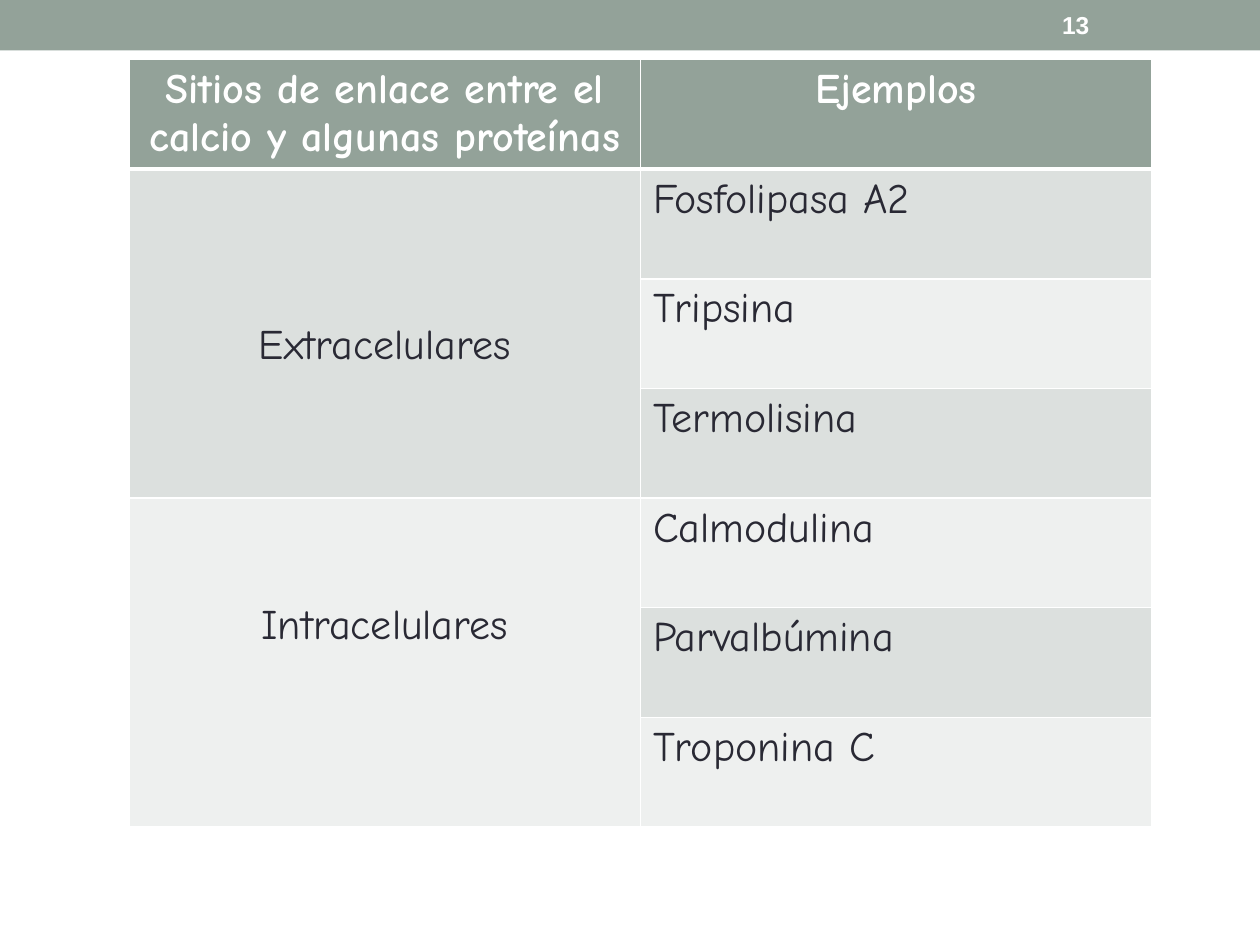
from dataclasses import dataclass

from lxml.etree import SubElement
from pptx import Presentation
from pptx.dml.color import RGBColor
from pptx.enum.shapes import MSO_SHAPE
from pptx.enum.text import MSO_ANCHOR, PP_ALIGN
from pptx.oxml.ns import qn
from pptx.util import Cm, Pt


@dataclass(frozen=True)
class Theme:
    sage: str = "93A299"
    band_dark: str = "DCE0DE"
    band_light: str = "EEF0EF"
    white: str = "FFFFFF"
    ink: str = "292934"
    table_font: str = "Comic Neue"
    number_font: str = "Arial"
    table_size: int = 24
    number_size: int = 14


HEADINGS = ["Sitios de enlace entre el calcio y algunas proteínas", "Ejemplos"]
# Site, distance from the top of its cell to its label (cm), example proteins
GROUPS = [
    ("Extracelulares", 3.07, ["Fosfolipasa A2", "Tripsina", "Termolisina"]),
    ("Intracelulares", 2.08, ["Calmodulina", "Parvalbúmina", "Troponina C"]),
]


class PageBuilder:
    def __init__(self, page, theme):
        self.page = page
        self.theme = theme

    def add_text(self, frame, text, font, size, color, bold=False, align=PP_ALIGN.LEFT):
        para = frame.paragraphs[0]
        para.alignment = align
        span = para.add_run()
        span.text = text
        span.font.name = font
        span.font.size = Pt(size)
        span.font.bold = bold
        span.font.color.rgb = RGBColor.from_string(color)

    def bar(self, left, top, width, height):
        shape = self.page.shapes.add_shape(
            MSO_SHAPE.RECTANGLE, Cm(left), Cm(top), Cm(width), Cm(height))
        shape.shadow.inherit = False
        shape.fill.solid()
        shape.fill.fore_color.rgb = RGBColor.from_string(self.theme.sage)
        shape.line.fill.background()

    def page_number(self, text, left, top, width, height):
        box = self.page.shapes.add_textbox(Cm(left), Cm(top), Cm(width), Cm(height))
        frame = box.text_frame
        frame.word_wrap = True
        frame.vertical_anchor = MSO_ANCHOR.MIDDLE
        self.add_text(frame, text, self.theme.number_font, self.theme.number_size,
                      self.theme.white, bold=True)

    def style_cell(self, cell, fill, top=1, bottom=1):
        """Fill the cell and draw its white borders, widths in points."""
        properties = cell._tc.get_or_add_tcPr()
        for side, width in (("L", 1), ("R", 1), ("T", top), ("B", bottom)):
            line = SubElement(properties, qn(f"a:ln{side}"), w=str(Pt(width)))
            solid = SubElement(line, qn("a:solidFill"))
            SubElement(solid, qn("a:srgbClr"), val=self.theme.white)
        cell.fill.solid()
        cell.fill.fore_color.rgb = RGBColor.from_string(fill)

    def cell_text(self, cell, text, header=False, align=PP_ALIGN.LEFT):
        color = self.theme.white if header else self.theme.ink
        self.add_text(cell.text_frame, text, self.theme.table_font,
                      self.theme.table_size, color, header, align)

    def grouped_table(self, headings, groups, left, top, column_width, row_height):
        """Table whose first column merges the rows of each group."""
        row_count = 1 + sum(len(examples) for _, _, examples in groups)
        table = self.page.shapes.add_table(
            row_count, len(headings), Cm(left), Cm(top),
            Cm(column_width * len(headings)), Cm(row_height * row_count)).table
        for column in table.columns:
            column.width = Cm(column_width)
        for row in table.rows:
            row.height = Cm(row_height)

        for index, heading in enumerate(headings):
            cell = table.cell(0, index)
            self.style_cell(cell, self.theme.sage, bottom=3)
            self.cell_text(cell, heading, header=True, align=PP_ALIGN.CENTER)

        bands = (self.theme.band_dark, self.theme.band_light)
        first = 1
        for site, label_offset, examples in groups:
            site_fill = bands[(first - 1) % 2]
            for row, example in enumerate(examples, first):
                border = 3 if row == 1 else 1
                self.style_cell(table.cell(row, 0), site_fill, top=border)
                self.style_cell(table.cell(row, 1), bands[(row - 1) % 2], top=border)
                self.cell_text(table.cell(row, 1), example)
            site_cell = table.cell(first, 0)
            site_cell.merge(table.cell(first + len(examples) - 1, 0))
            site_cell.margin_top = Cm(label_offset)
            self.cell_text(site_cell, site, align=PP_ALIGN.CENTER)
            first += len(examples)


def main():
    deck = Presentation()
    deck.slide_width, deck.slide_height = Cm(25.4), Cm(19.05)
    blank_layout = deck.slide_layouts[6]
    builder = PageBuilder(deck.slides.add_slide(blank_layout), Theme())
    builder.bar(0, 0, 25.4, 1.02)
    builder.grouped_table(HEADINGS, GROUPS, left=2.6, top=1.2,
                          column_width=10.31, row_height=2.21)
    builder.page_number("13", 21.16, 0.05, 2.97, 0.91)
    deck.save("out.pptx")


if __name__ == "__main__":
    main()
